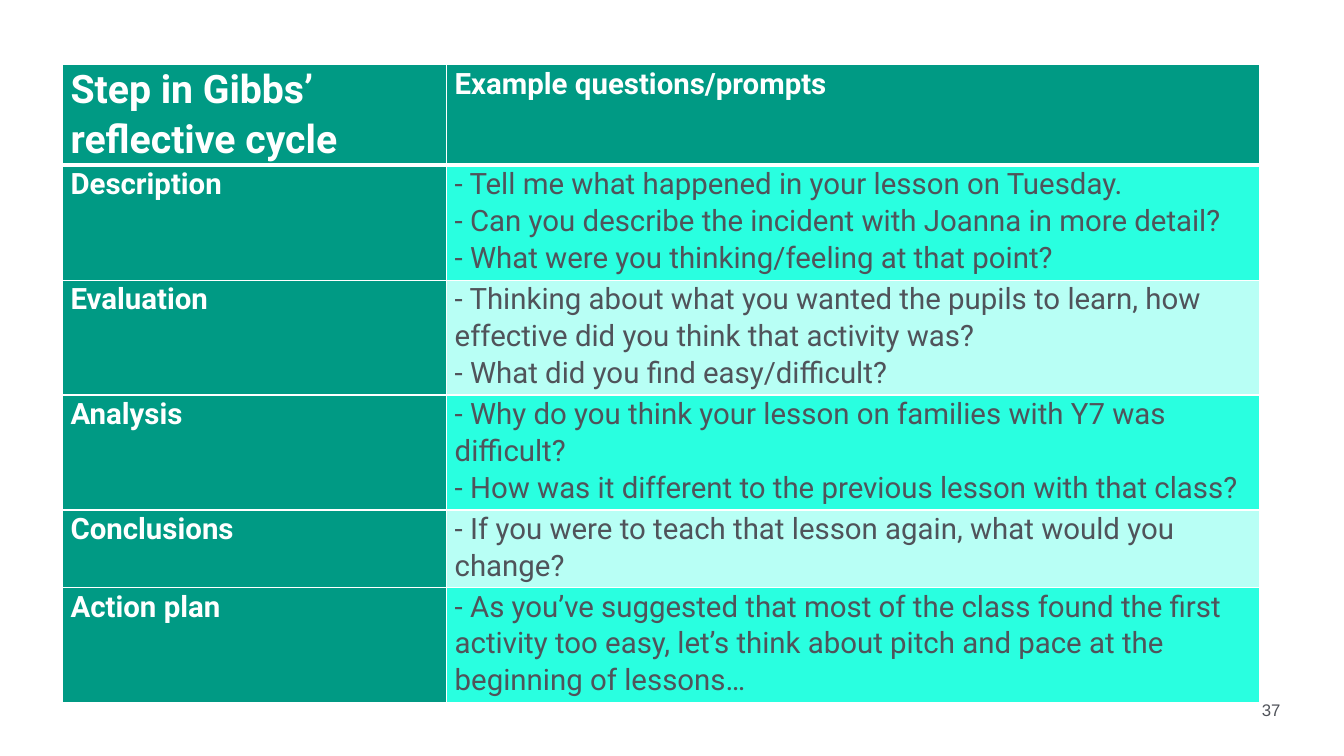
from lxml.etree import SubElement as Sub
from pptx import Presentation
from pptx.dml.color import RGBColor as Rgb
from pptx.enum.text import PP_ALIGN as Align, MSO_ANCHOR as Anchor
from pptx.oxml.ns import qn
from pptx.util import Inches as In, Pt

HUES = {"head": "009A84", "dark": "29FFE0", "pale": "B8FFF5",
        "text": "50535A", "white": "FFFFFF"}
COLS = [3.81, 8.06]
ROWS = [0.96, 1.14, 1.14, 1.14, 0.77, 1.14]
STEPS = [
    ("Step in Gibbs’ reflective cycle", ["Example questions/prompts"]),
    ("Description", [
        "- Tell me what happened in your lesson on Tuesday.",
        "- Can you describe the incident with Joanna in more detail?",
        "- What were you thinking/feeling at that point?"]),
    ("Evaluation", [
        "- Thinking about what you wanted the pupils to learn, how "
        "effective did you think that activity was?",
        "- What did you find easy/difficult?"]),
    ("Analysis", [
        "- Why do you think your lesson on families with Y7 was difficult?",
        "- How was it different to the previous lesson with that class?"]),
    ("Conclusions", [
        "- If you were to teach that lesson again, what would you change?"]),
    ("Action plan", [
        "- As you’ve suggested that most of the class found the first "
        "activity too easy, let’s think about pitch and pace at the "
        "beginning of lessons…"]),
]


def style(para, size, hue, face, bold=False):
    """Set the font of a paragraph."""
    font = para.font
    font.size, font.name, font.bold = Pt(size), face, bold
    font.color.rgb = Rgb.from_string(HUES[hue])


def edge(cell, widths):
    """Draw white borders round a cell, widths in points by side."""
    props = cell._tc.get_or_add_tcPr()
    for spot, (side, width) in enumerate(widths.items()):
        line = props.makeelement(qn(f"a:ln{side}"), {"w": str(Pt(width))})
        fill = Sub(line, qn("a:solidFill"))
        Sub(fill, qn("a:srgbClr"), val=HUES["white"])
        props.insert(spot, line)


def fill_cell(cell, lines, size, back, hue, bold):
    """Write lines of text into a cell on a plain colour."""
    cell.margin_left = cell.margin_right = In(0.08)
    cell.margin_top = cell.margin_bottom = 0
    cell.vertical_anchor = Anchor.TOP
    cell.fill.solid()
    cell.fill.fore_color.rgb = Rgb.from_string(HUES[back])
    cell.text = "\n".join(lines)
    for para in cell.text_frame.paragraphs:
        para.line_spacing = 1.07
        style(para, size, hue, "Roboto", bold)


def add_cycle(slide, left, top):
    """Add the table of reflective steps and prompts."""
    table = slide.shapes.add_table(
        len(ROWS), len(COLS), In(left), In(top),
        In(sum(COLS)), In(sum(ROWS))).table
    for col, width in zip(table.columns, COLS):
        col.width = In(width)
    for row, (step, prompts) in enumerate(STEPS):
        table.rows[row].height = In(ROWS[row])
        band = "dark" if row % 2 else "pale"
        for col, lines in enumerate(([step], prompts)):
            cell = table.cell(row, col)
            title = row == 0 or col == 0
            fill_cell(cell, lines, 28 if row == col == 0 else 21,
                      "head" if title else band,
                      "white" if title else "text", title)
            edge(cell, {"L": 1, "R": 1, "T": 3 if row == 1 else 1,
                        "B": 3 if row == 0 else 1})


def add_number(slide, left, top, width, height):
    """Add the page number."""
    box = slide.shapes.add_textbox(In(left), In(top), In(width), In(height))
    frame = box.text_frame
    frame.word_wrap = True
    frame.margin_left = frame.margin_right = 0
    frame.margin_top = frame.margin_bottom = 0
    para = frame.paragraphs[0]
    para.text = "37"
    para.alignment = Align.RIGHT
    para.space_after = Pt(6)
    style(para, 12, "text", "Arial")


def main():
    """Build and save the slide."""
    deck = Presentation()
    deck.slide_width, deck.slide_height = In(13.33), In(7.5)
    slide = deck.slides.add_slide(deck.slide_layouts[6])
    add_number(slide, 11.71, 6.94, 0.99, 0.28)
    add_cycle(slide, 0.62, 0.64)
    deck.save("out.pptx")


if __name__ == "__main__":
    main()
